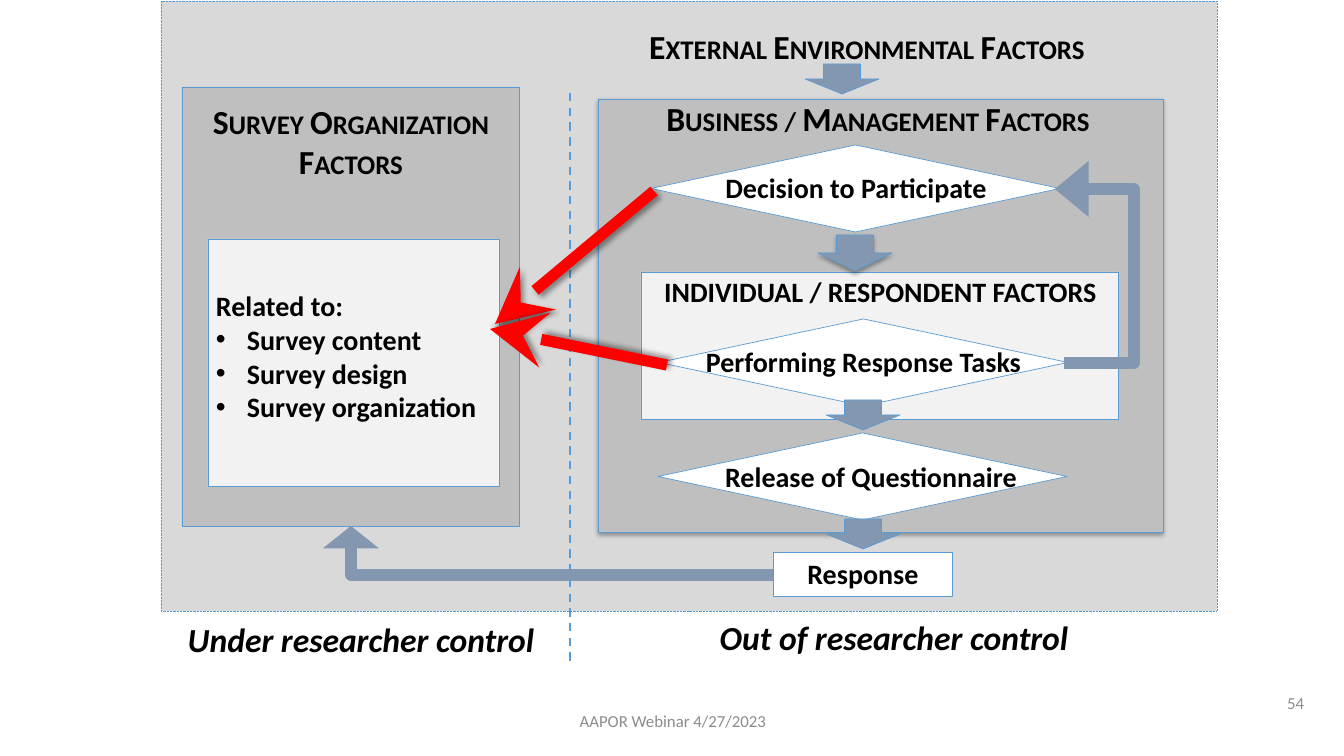
import pptx
import pptx.util
import pptx.oxml
import pptx.oxml.ns
import pptx.dml.color
import pptx.enum.dml
import pptx.enum.shapes
import pptx.enum.text
import lxml.etree

RGBColor = pptx.dml.color.RGBColor
BLACK = RGBColor(0x00, 0x00, 0x00)
WHITE = RGBColor(0xFF, 0xFF, 0xFF)
PALE = RGBColor(0xF2, 0xF2, 0xF2)
LIGHT = RGBColor(0xD9, 0xD9, 0xD9)
MEDIUM = RGBColor(0xBF, 0xBF, 0xBF)
MUTED = RGBColor(0x8C, 0x8C, 0x8C)
BLUE = RGBColor(0x5B, 0x9B, 0xD5)
SLATE = RGBColor(0x84, 0x97, 0xB0)
RED = RGBColor(0xFF, 0x00, 0x00)

SHAPE = pptx.enum.shapes.MSO_SHAPE
CONNECTOR = pptx.enum.shapes.MSO_CONNECTOR
DASH = pptx.enum.dml.MSO_LINE
ALIGN = pptx.enum.text.PP_ALIGN
ANCHOR = pptx.enum.text.MSO_ANCHOR

# Shadows: opacity in percent, blur and distance in points, angle in degrees
SOFT_SHADOW = (35, 3.1, 1.8, 90)
DOWNHILL_SHADOW = (40, 4, 3, 45)
UPHILL_SHADOW = (40, 4, 3, 315)


def px(*lengths):
    """Turn slide pixels into EMU."""
    return [pptx.util.Emu(round(length * 914400 / 100.8)) for length in lengths]


def add_element(parent, tag, **attributes):
    element = lxml.etree.SubElement(parent, pptx.oxml.ns.qn(tag))
    for name, value in attributes.items():
        element.set(name, str(value))
    return element


class Diagram:
    font_name = "Calibri"
    outline_width = 0.5
    bullet_indent = 31

    def __init__(self, presentation):
        self.slide = presentation.slides.add_slide(presentation.slide_layouts[6])

    def cast_shadow(self, effects, shadow):
        opacity, blur, distance, angle = shadow
        outer = add_element(effects, "a:outerShdw", blurRad=pptx.util.Pt(blur),
                            dist=pptx.util.Pt(distance), dir=angle * 60000,
                            algn="ctr", rotWithShape=0)
        color = add_element(outer, "a:srgbClr", val=BLACK)
        add_element(color, "a:alpha", val=opacity * 1000)

    def box(self, kind, place, fill, dash=None, shadow=None):
        shape = self.slide.shapes.add_shape(kind, *px(*place))
        shape.fill.solid()
        shape.fill.fore_color.rgb = fill
        shape.line.color.rgb = BLUE
        shape.line.width = pptx.util.Pt(self.outline_width)
        if dash:
            shape.line.dash_style = dash
        shape.shadow.inherit = False
        if shadow:
            effects = shape._element.spPr.find(pptx.oxml.ns.qn("a:effectLst"))
            self.cast_shadow(effects, shadow)

    def text(self, place, lines, size=20, color=BLACK, bold=True, italic=False,
             small_caps=False, align=ALIGN.CENTER, anchor=ANCHOR.TOP,
             spacing=None, bullets_from=None):
        """Place text; lines from index bullets_from onwards get bullets."""
        frame = self.slide.shapes.add_textbox(*px(*place)).text_frame
        frame.word_wrap = True
        frame.vertical_anchor = anchor
        frame.text = "\n".join(lines)
        for index, paragraph in enumerate(frame.paragraphs):
            paragraph.alignment = align
            if spacing:
                paragraph.line_spacing = spacing
            if bullets_from is not None and index >= bullets_from:
                indent = px(self.bullet_indent)[0]
                properties = paragraph._p.get_or_add_pPr()
                properties.set("marL", str(int(indent)))
                properties.set("indent", str(-int(indent)))
                add_element(properties, "a:buFont", typeface="Arial")
                add_element(properties, "a:buChar", char="•")
            font = paragraph.font
            font.name = self.font_name
            font.size = pptx.util.Pt(size)
            font.bold = bold
            font.italic = italic
            font.color.rgb = color
            if small_caps:
                font._rPr.set("cap", "small")

    def heading(self, place, label):
        self.text(place, [label], size=24, small_caps=True)

    def step(self, kind, place, label_place, label):
        self.box(kind, place, WHITE)
        self.text(label_place, [label])

    def line(self, start, end, color, width, kind=CONNECTOR.STRAIGHT, dash=None,
             arrow=None, shadow=None):
        """Draw a connector; arrow is (end tag, type, width, length)."""
        connector = self.slide.shapes.add_connector(kind, *px(*start, *end))
        connector.line.color.rgb = color
        connector.line.width = pptx.util.Pt(width)
        if dash:
            connector.line.dash_style = dash
        properties = connector._element.spPr
        if arrow:
            tag, head, head_width, head_length = arrow
            outline = properties.find(pptx.oxml.ns.qn("a:ln"))
            add_element(outline, tag, type=head, w=head_width, len=head_length)
        effects = add_element(properties, "a:effectLst")
        if shadow:
            self.cast_shadow(effects, shadow)
        return connector

    def feedback(self, start, end, head_length, turn_x=None):
        """Draw an elbow arrow with one corner, or two corners at turn_x."""
        connector = self.line(start, end, SLATE, 8, CONNECTOR.ELBOW,
                              arrow=("a:tailEnd", "triangle", "lg", head_length))
        geometry = connector._element.spPr.find(pptx.oxml.ns.qn("a:prstGeom"))
        if turn_x is None:
            geometry.set("prst", "bentConnector2")
        else:
            share = (turn_x - start[0]) / (end[0] - start[0])
            adjustments = geometry.find(pptx.oxml.ns.qn("a:avLst"))
            add_element(adjustments, "a:gd", name="adj1",
                        fmla=f"val {round(share * 100000)}")


def main():
    presentation = pptx.Presentation()
    presentation.slide_width, presentation.slide_height = px(1344, 756)
    diagram = Diagram(presentation)

    diagram.text((1012, 683, 302, 40), ["54"], size=12, color=MUTED, bold=False,
                 align=ALIGN.RIGHT, anchor=ANCHOR.MIDDLE)
    diagram.box(SHAPE.RECTANGLE, (161, 1, 1056, 610), LIGHT, dash=DASH.ROUND_DOT)
    diagram.line((570, 93), (570, 664), BLUE, 1.5, dash=DASH.DASH)
    diagram.heading((570, 21, 594, 50), "External Environmental Factors")

    diagram.box(SHAPE.RECTANGLE, (182, 87, 337, 439), MEDIUM)
    diagram.heading((184, 96, 334, 92), "Survey Organization Factors")
    diagram.box(SHAPE.RECTANGLE, (208, 239, 291, 247), PALE)
    diagram.text((206, 284, 291, 145),
                 ["Related to:", "Survey content", "Survey design", "Survey organization"],
                 align=ALIGN.LEFT, bullets_from=1)

    diagram.box(SHAPE.RECTANGLE, (598, 99, 565, 433), MEDIUM, shadow=SOFT_SHADOW)
    diagram.box(SHAPE.RECTANGLE, (641, 272, 477, 147), PALE)
    diagram.heading((592, 93, 572, 50), "Business / Management Factors")
    diagram.text((598, 270, 565, 43), ["INDIVIDUAL / RESPONDENT FACTORS"])

    for kind, place, label_place, label in (
        (SHAPE.DIAMOND, (651, 145, 409, 87), (705, 166, 302, 44), "Decision to Participate"),
        (SHAPE.DIAMOND, (658, 433, 409, 87), (706, 455, 330, 44), "Release of Questionnaire"),
        (SHAPE.RECTANGLE, (773, 552, 179, 44), (788, 552, 150, 44), "Response"),
        (SHAPE.DIAMOND, (659, 319, 409, 87), (688, 340, 351, 44), "Performing Response Tasks"),
    ):
        diagram.step(kind, place, label_place, label)

    diagram.text((590, 594, 608, 65), ["Out of researcher control"], size=24,
                 italic=True, anchor=ANCHOR.MIDDLE, spacing=1.5)
    for left, top, height, shadow in (
        (805, 64, 30, None),
        (818, 235, 36, SOFT_SHADOW),
        (826, 400, 30, None),
        (826, 519, 30, None),
    ):
        diagram.box(SHAPE.DOWN_ARROW, (left, top, 74, height), SLATE, shadow=shadow)

    diagram.feedback((773, 575), (351, 526), "sm")
    diagram.feedback((1064, 363), (1055, 189), "med", turn_x=1134)
    diagram.text((160, 626, 402, 40), ["Under researcher control"], size=24,
                 italic=True, spacing=pptx.util.Pt(20))

    for start, end, shadow in (
        ((495, 324), (654, 191), DOWNHILL_SHADOW),
        ((490, 329), (667, 365), UPHILL_SHADOW),
    ):
        diagram.line(start, end, RED, 8, shadow=shadow,
                     arrow=("a:headEnd", "stealth", "lg", "lg"))
    diagram.text((446, 701, 454, 40), ["AAPOR Webinar 4/27/2023"], size=12,
                 color=MUTED, bold=False, anchor=ANCHOR.MIDDLE)

    presentation.save("out.pptx")


if __name__ == "__main__":
    main()
